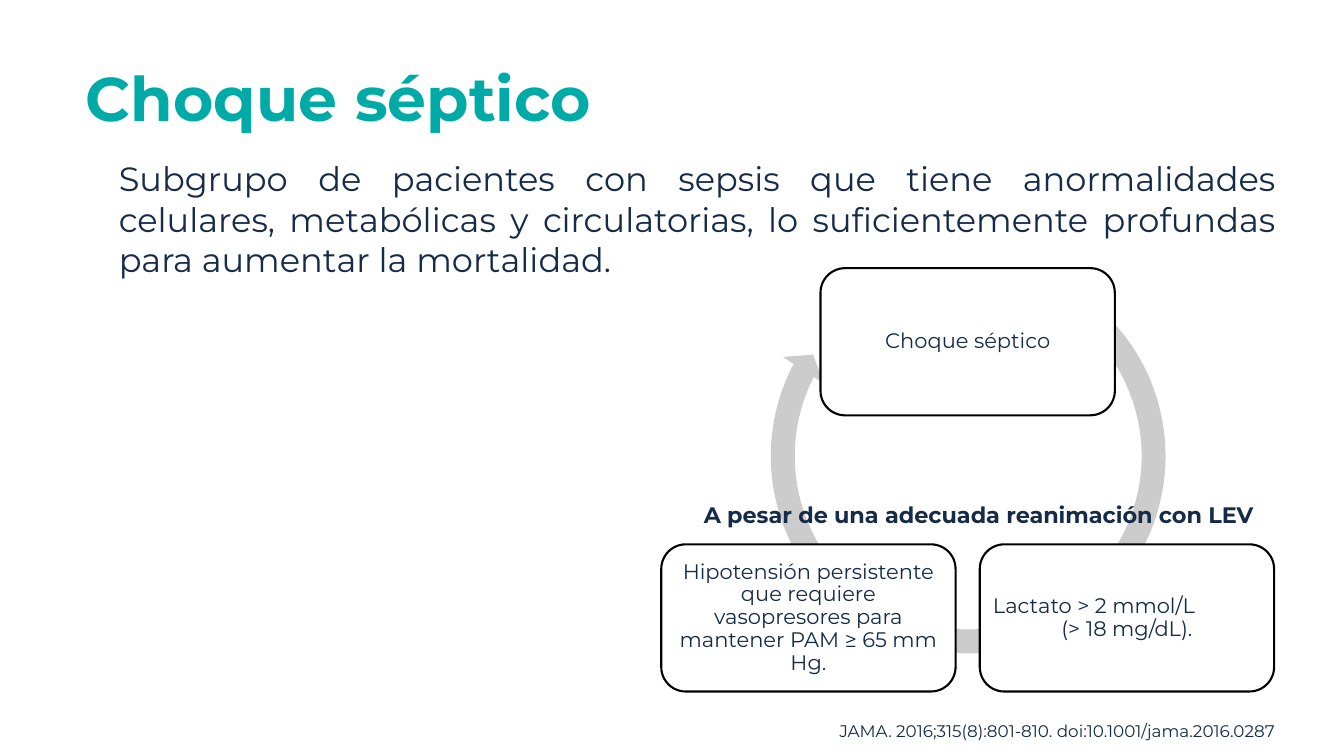
"""Build the septic shock slide: definition, cycle of three cards and citation."""
from dataclasses import dataclass

from pptx import Presentation
from pptx.dml.color import RGBColor
from pptx.enum.shapes import MSO_SHAPE
from pptx.enum.text import MSO_ANCHOR, PP_ALIGN
from pptx.shapes.autoshape import Shape
from pptx.slide import Slide
from pptx.util import Emu, Inches, Pt

LEFT, CENTER, JUSTIFY = PP_ALIGN.LEFT, PP_ALIGN.CENTER, PP_ALIGN.JUSTIFY
TOP, MIDDLE = MSO_ANCHOR.TOP, MSO_ANCHOR.MIDDLE
ROUNDED, CYCLE_ARROW = MSO_SHAPE.ROUNDED_RECTANGLE, MSO_SHAPE.CIRCULAR_ARROW

FONT = "Montserrat"
COLOURS = {
    "title": "00AAA7",
    "text": "152B48",
    "arrow": "CCCCCC",
    "card": "FFFFFF",
    "outline": "000000",
}
SLIDE_WIDTH, SLIDE_HEIGHT = Inches(13.333), Inches(7.5)
COLUMN, ROW = SLIDE_WIDTH / 100, SLIDE_HEIGHT / 100

CARD_WIDTH, CARD_HEIGHT = 21.9, 19.47
CARD_STEP = 23.7
CYCLE_LEFT, CYCLE_TOP, CYCLE_BOTTOM = 49.2, 35.47, 72
CARD_INSET = Inches(0.06)
ARROW_ADJUSTMENTS = (0.057, 3.405, 124.492, 182.502, 0.059)


@dataclass(frozen=True)
class Area:
    """A rectangle in hundredths of the slide's width and height."""

    left: float
    top: float
    width: float
    height: float

    def lengths(self) -> tuple[Emu, Emu, Emu, Emu]:
        """Return left, top, width and height as slide lengths."""
        return (
            Emu(round(self.left * COLUMN)),
            Emu(round(self.top * ROW)),
            Emu(round(self.width * COLUMN)),
            Emu(round(self.height * ROW)),
        )


@dataclass(frozen=True)
class Line:
    """One paragraph and its alignment."""

    text: str
    alignment: PP_ALIGN = LEFT


@dataclass(frozen=True)
class Label:
    """A free text box with its type settings."""

    area: Area
    line: Line
    size: int
    colour: str = "text"
    bold: bool = False
    anchor: MSO_ANCHOR = TOP
    spacing: float = 1.0


@dataclass(frozen=True)
class Card:
    """A cycle card placed by steps from the left and by its top row."""

    steps: float
    top: float
    lines: tuple[Line, ...]


LABELS = (
    Label(Area(5.63, 3.73, 86.25, 19.33), Line("Choque séptico"), 44,
          "title", True, MIDDLE, 0.9),
    Label(Area(8.1, 20.27, 87.53, 30.53),
          Line("Subgrupo de pacientes con sepsis que tiene anormalidades "
               "celulares, metabólicas y circulatorias, lo suficientemente "
               "profundas para aumentar la mortalidad.", JUSTIFY), 24),
)
CYCLE_LABELS = (
    Label(Area(61.73, 94.67, 36.38, 4),
          Line("JAMA. 2016;315(8):801-810. doi:10.1001/jama.2016.0287"), 12),
    Label(Area(50.7, 65.6, 44.25, 4.93),
          Line("A pesar de una adecuada reanimación con LEV", CENTER), 16,
          bold=True),
)
CARDS = (
    Card(0.5, CYCLE_TOP, (Line("Choque séptico", CENTER),)),
    Card(1, CYCLE_BOTTOM, (Line("Lactato > 2 mmol/L"),
                           Line("(> 18 mg/dL).", CENTER))),
    Card(0, CYCLE_BOTTOM, (Line("Hipotensión persistente que requiere "
                                "vasopresores para mantener PAM ≥ 65 mm Hg.",
                                CENTER),)),
)


def colour(name: str) -> RGBColor:
    """Return a named colour."""
    return RGBColor.from_string(COLOURS[name])


def write(box: Shape, lines: tuple[Line, ...], size: int, colour_name: str,
          bold: bool, anchor: MSO_ANCHOR, spacing: float) -> None:
    """Write formatted paragraphs into a box."""
    frame = box.text_frame
    frame.word_wrap = True
    frame.vertical_anchor = anchor
    font_format = {"name": FONT, "size": Pt(size), "bold": bold}
    for index, line in enumerate(lines):
        para = frame.add_paragraph() if index else frame.paragraphs[0]
        para.alignment = line.alignment
        para.line_spacing = spacing
        span = para.add_run()
        span.text = line.text
        for attribute, value in font_format.items():
            setattr(span.font, attribute, value)
        span.font.color.rgb = colour(colour_name)


def add_label(page: Slide, label: Label) -> None:
    """Add a free text box."""
    box = page.shapes.add_textbox(*label.area.lengths())
    write(box, (label.line,), label.size, label.colour, label.bold,
          label.anchor, label.spacing)


def add_cycle_arrow(page: Slide) -> None:
    """Add the circular arrow behind the cards."""
    arrow = page.shapes.add_shape(
        CYCLE_ARROW, *Area(56.4, 32.53, 31.28, 55.6).lengths())
    for index, value in enumerate(ARROW_ADJUSTMENTS):
        arrow.adjustments[index] = value
    arrow.shadow.inherit = False
    arrow.fill.solid()
    arrow.fill.fore_color.rgb = colour("arrow")
    arrow.line.fill.background()


def add_card(page: Slide, card: Card) -> None:
    """Add a rounded card with its text."""
    area = Area(CYCLE_LEFT + card.steps * CARD_STEP, card.top,
                CARD_WIDTH, CARD_HEIGHT)
    box = page.shapes.add_shape(ROUNDED, *area.lengths())
    box.shadow.inherit = False
    box.fill.solid()
    box.fill.fore_color.rgb = colour("card")
    box.line.color.rgb = colour("outline")
    box.line.width = Pt(1.5)
    for side in ("left", "top", "right", "bottom"):
        setattr(box.text_frame, f"margin_{side}", CARD_INSET)
    write(box, card.lines, 15, "text", False, MIDDLE, 0.9)


def main() -> None:
    """Build and save the deck."""
    deck = Presentation()
    deck.slide_width, deck.slide_height = SLIDE_WIDTH, SLIDE_HEIGHT
    page = deck.slides.add_slide(deck.slide_layouts[6])
    for label in LABELS:
        add_label(page, label)
    add_cycle_arrow(page)
    for card in CARDS:
        add_card(page, card)
    for label in CYCLE_LABELS:
        add_label(page, label)
    deck.save("out.pptx")


if __name__ == "__main__":
    main()
